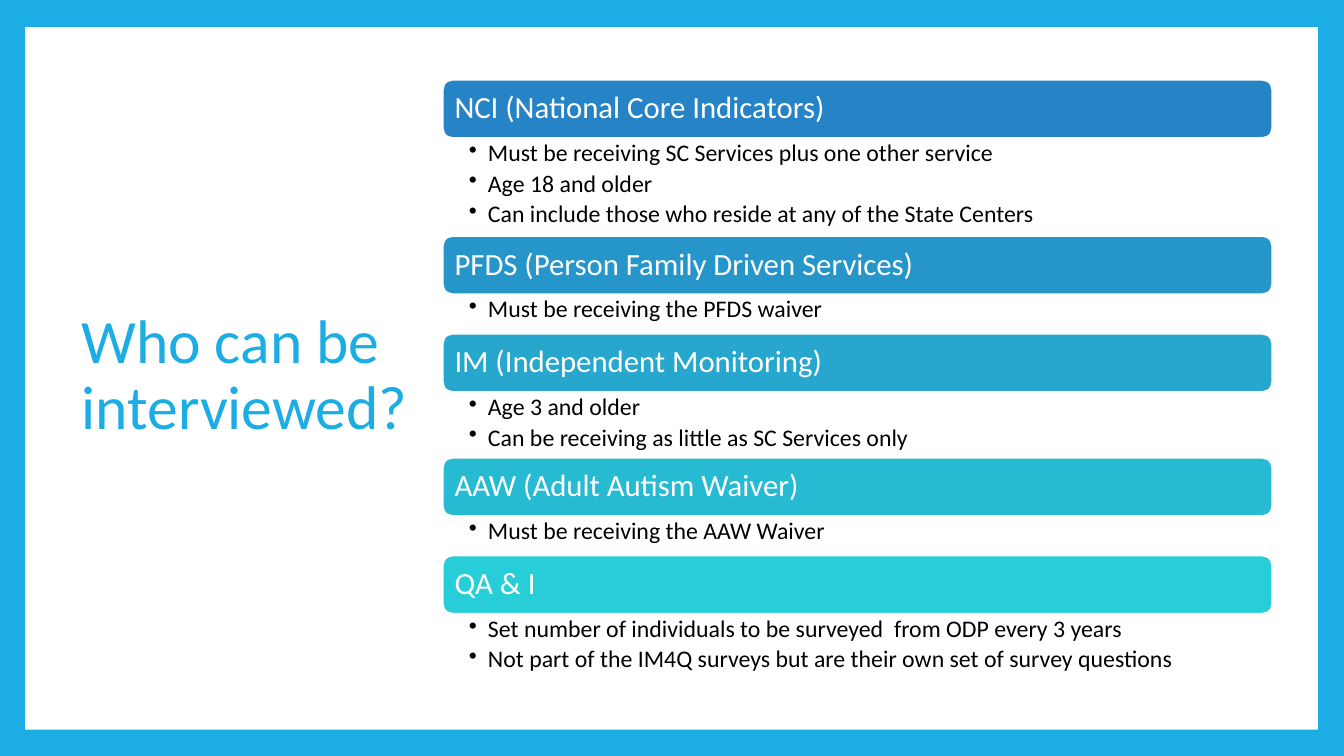
from pptx import Presentation, util as u
from pptx.dml.color import RGBColor
from pptx.enum import shapes, text
from pptx.oxml import parse_xml
from pptx.oxml.ns import nsdecls

FONT = "Calibri"
HUES = {
    "sky": "1CADE4", "white": "FFFFFF", "black": "000000",
    "nci": "2683C6", "pfds": "2695CA", "im": "27A7CE", "aaw": "27BAD3", "qa": "27CED7",
}
GROUPS = [
    ("nci", "NCI (National Core Indicators)", [
        "Must be receiving SC Services plus one other service",
        "Age 18 and older",
        "Can include those who reside at any of the State Centers"]),
    ("pfds", "PFDS (Person Family Driven Services)", ["Must be receiving the PFDS waiver"]),
    ("im", "IM (Independent Monitoring)", [
        "Age 3 and older",
        "Can be receiving as little as SC Services only"]),
    ("aaw", "AAW (Adult Autism Waiver)", ["Must be receiving the AAW Waiver"]),
    ("qa", "QA & I", [
        "Set number of individuals to be surveyed  from ODP every 3 years",
        "Not part of the IM4Q surveys but are their own set of survey questions"]),
]
BAR = 0.58
DEPTH = {1: 0.39, 2: 0.65, 3: 0.97}  # list height by number of bullets


def hue(name):
    return RGBColor.from_string(HUES[name])


def inches(box):
    return [u.Inches(v) for v in box]


def set_frame(frame, pads, anchor):
    frame.word_wrap = True
    frame.vertical_anchor = anchor
    (frame.margin_left, frame.margin_top,
     frame.margin_right, frame.margin_bottom) = inches(pads)


def add_line(para, words, size, color, after=0):
    para.alignment = text.PP_ALIGN.LEFT
    para.line_spacing = 0.9
    para.space_before = u.Pt(0)
    para.space_after = u.Pt(after)
    run = para.add_run()
    run.text = words
    run.font.name = FONT
    run.font.size = u.Pt(size)
    run.font.color.rgb = hue(color)


def add_bullet(para):
    props = para._p.get_or_add_pPr()
    props.set("marL", str(u.Inches(0.19)))
    props.set("indent", str(-u.Inches(0.19)))
    props.append(parse_xml(f'<a:buChar {nsdecls("a")} char="•"/>'))


def add_block(slide, kind, box, color):
    block = slide.shapes.add_shape(kind, *inches(box))
    block.shadow.inherit = False
    block.fill.solid()
    block.fill.fore_color.rgb = hue(color)
    return block


def add_panel(slide, box):
    # Coloured border around a white panel
    slide.background.fill.solid()
    slide.background.fill.fore_color.rgb = hue("sky")
    panel = add_block(slide, shapes.MSO_SHAPE.RECTANGLE, box, "white")
    panel.line.fill.background()


def add_title(slide, box):
    frame = slide.shapes.add_textbox(*inches(box)).text_frame
    set_frame(frame, (0.1, 0.05, 0.1, 0.05), text.MSO_ANCHOR.MIDDLE)
    add_line(frame.paragraphs[0], "Who can be interviewed?", 44, "sky")


def add_bar(slide, box, color, words):
    bar = add_block(slide, shapes.MSO_SHAPE.ROUNDED_RECTANGLE, box, color)
    bar.line.color.rgb = hue("white")
    bar.line.width = u.Pt(1.5)
    set_frame(bar.text_frame, (0.09, 0.09, 0.09, 0.09), text.MSO_ANCHOR.MIDDLE)
    add_line(bar.text_frame.paragraphs[0], words, 22, "white")


def add_rules(slide, box, rules):
    frame = slide.shapes.add_textbox(*inches(box)).text_frame
    set_frame(frame, (0.26, 0.03, 0.17, 0.03), text.MSO_ANCHOR.TOP)
    for i, rule in enumerate(rules):
        para = frame.add_paragraph() if i else frame.paragraphs[0]
        add_line(para, rule, 17, "black", 3.4)
        add_bullet(para)


def add_groups(slide, left, top, width):
    # Each bar is followed by its list of rules
    for color, name, rules in GROUPS:
        depth = DEPTH[len(rules)]
        add_bar(slide, (left, top, width, BAR), color, name)
        add_rules(slide, (left, top + BAR, width, depth), rules)
        top += BAR + depth


def main():
    deck = Presentation()
    deck.slide_width, deck.slide_height = inches((13.33, 7.5))
    slide = deck.slides.add_slide(deck.slide_layouts[6])
    add_panel(slide, (0.25, 0.27, 12.82, 6.97))
    add_title(slide, (0.71, 0.67, 3.68, 6.13))
    add_groups(slide, 4.39, 0.79, 8.23)
    deck.save("out.pptx")


if __name__ == "__main__":
    main()
